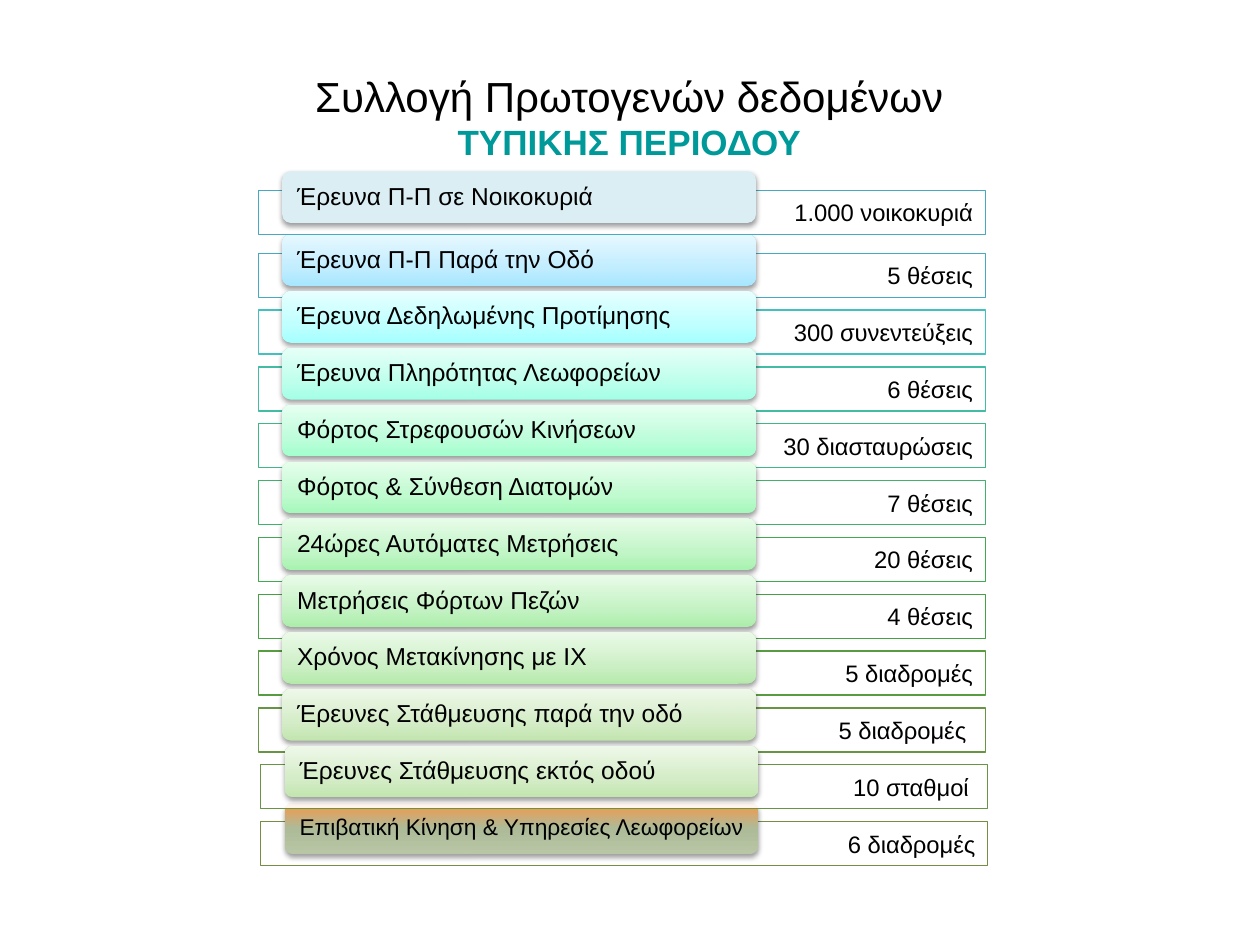
"""Builds a slide listing twelve traffic surveys, each with its sample size."""
from lxml import etree
from pptx import Presentation
from pptx.dml.color import RGBColor
from pptx.enum.shapes import MSO_SHAPE
from pptx.enum.text import MSO_ANCHOR, PP_ALIGN
from pptx.oxml.ns import qn
from pptx.util import Inches, Pt

RECT, ROUND = MSO_SHAPE.RECTANGLE, MSO_SHAPE.ROUNDED_RECTANGLE
MID = MSO_ANCHOR.MIDDLE
LEFT, RIGHT, MIDST = PP_ALIGN.LEFT, PP_ALIGN.RIGHT, PP_ALIGN.CENTER


def ink(hue):
    return RGBColor.from_string(hue)


def node(base, tag, **attrs):
    return etree.SubElement(base, qn("a:" + tag), {k: str(v) for k, v in attrs.items()})


rows = [
    ("Έρευνα Π-Π σε Νοικοκυριά", "1.000 νοικοκυριά", "46AAC5", ["DBEEF4"]),
    ("Έρευνα Π-Π Παρά την Οδό", "5 θέσεις", "46AAC5", ["A7E6FF", "C1EDFF", "E7F8FF"]),
    ("Έρευνα Δεδηλωμένης Προτίμησης", "300 συνεντεύξεις", "43C1C1", ["A5FFFF", "BFFFFF", "E7FFFF"]),
    ("Έρευνα Πληρότητας Λεωφορείων", "6 θέσεις", "42BDA3", ["A3FFE5", "BEFFEC", "E6FFF7"]),
    ("Φόρτος Στρεφουσών Κινήσεων", "30 διασταυρώσεις", "40B885", ["A1FFCC", "BEFDDB", "E6FFF1"]),
    ("Φόρτος & Σύνθεση Διατομών", "7 θέσεις", "41B16B", ["A4F9BB", "C0FACF", "E6FEEC"]),
    ("24ώρες Αυτόματες Μετρήσεις", "20 θέσεις", "41A952", ["A7F3AF", "C2F5C7", "E7FCE9"]),
    ("Μετρήσεις Φόρτων Πεζών", "4 θέσεις", "45A242", ["ABEEAA", "C5F2C4", "E8FBE8"]),
    ("Χρόνος Μετακίνησης με ΙΧ", "5 διαδρομές", "589C42", ["B6EAAC", "CCEFC5", "EBFAE8"]),
    ("Έρευνες Στάθμευσης παρά την οδό", "5 διαδρομές ", "679543", ["C2E5AE", "D4ECC7", "EEF8E9"]),
    ("Έρευνες Στάθμευσης εκτός οδού", "10 σταθμοί ", "679543", ["C2E5AE", "D4ECC7", "EEF8E9"]),
    ("Επιβατική Κίνηση & Υπηρεσίες Λεωφορείων", "6 διαδρομές", "758E43", ["B9C6A5", "ADBB99", "F79646"]),
]
last = len(rows) - 1
order = [*range(1, last - 1), 0, last, last - 1]
first, second, pitch = 1.51, 2.01, 4.51 / 10

deck = Presentation()
deck.slide_width, deck.slide_height = Inches(10), Inches(7.5)
slide = deck.slides.add_slide(deck.slide_layouts[6])
shapes = slide.shapes

title = shapes.add_textbox(Inches(1.21), Inches(0.52), Inches(7.57), Inches(0.81))
frame = title.text_frame
frame.word_wrap, frame.vertical_anchor = True, MID
para = frame.paragraphs[0]
para.alignment = MIDST
for text, size, hue, bold in [
    ("Συλλογή Πρωτογενών δεδομένων", 24, "000000", False),
    ("ΤΥΠΙΚΗΣ ΠΕΡΙΟΔΟΥ", 20, "009999", True),
]:
    if para.runs:
        para.add_line_break()
    run = para.add_run()
    run.text = text
    run.font.color.rgb = ink(hue)
    for key, val in {"name": "Arial", "size": Pt(size), "bold": bold}.items():
        setattr(run.font, key, val)

for i in order:
    label, count, edge, stops = rows[i]
    top = second + (i - 1) * pitch if i else first
    left = 2.07 if i >= last - 1 else 2.05
    bar = shapes.add_shape(RECT, Inches(left), Inches(top), Inches(5.77), Inches(0.35))
    pill = shapes.add_shape(ROUND, Inches(left + 0.19), Inches(top - 0.15), Inches(3.76), Inches(0.41))
    pill.adjustments[0] = 1 / 6

    bar.fill.solid()
    bar.fill.fore_color.rgb = ink("FFFFFF")
    node(bar._element.spPr.find(".//" + qn("a:srgbClr")), "alpha", val=90000)
    bar.line.color.rgb = ink(edge)
    bar.line.width = Pt(0.75)

    if len(stops) == 1:
        pill.fill.solid()
        pill.fill.fore_color.rgb = ink(stops[0])
    else:
        pill.fill.gradient()
        pill.fill.gradient_angle = 90
        ramp = pill._element.spPr.find(".//" + qn("a:gsLst"))
        ramp.clear()
        for pos, hue in zip((0, 50 if i == last else 35, 100), stops):
            node(node(ramp, "gs", pos=pos * 1000), "srgbClr", val=hue)
    pill.line.fill.background()

    for shape, text, size, align, pad, gap in [
        (bar, count, 13.6, RIGHT, (0.1, 0.1, 0.05), {}),
        (pill, label, 13 if i == last else 14, LEFT, (0.1, 0.03, 0),
         {"line_spacing": 0.9, "space_after": Pt(5)}),
    ]:
        shape.shadow.inherit = False
        frame = shape.text_frame
        near, far, end = map(Inches, pad)
        for key, val in {"word_wrap": True, "vertical_anchor": MID, "margin_left": near,
                         "margin_right": far, "margin_top": end, "margin_bottom": end}.items():
            setattr(frame, key, val)
        para = frame.paragraphs[0]
        for key, val in {"alignment": align, **gap}.items():
            setattr(para, key, val)
        run = para.add_run()
        run.text = text
        run.font.name, run.font.size = "Arial", Pt(size)
        run.font.color.rgb = ink("000000")

    glow = node(pill._element.spPr.find(qn("a:effectLst")), "outerShdw",
                blurRad=Pt(3.1), dist=Pt(1.6), dir=5400000, rotWithShape=0)
    node(node(glow, "srgbClr", val="000000"), "alpha", val=38000)

deck.save("out.pptx")
